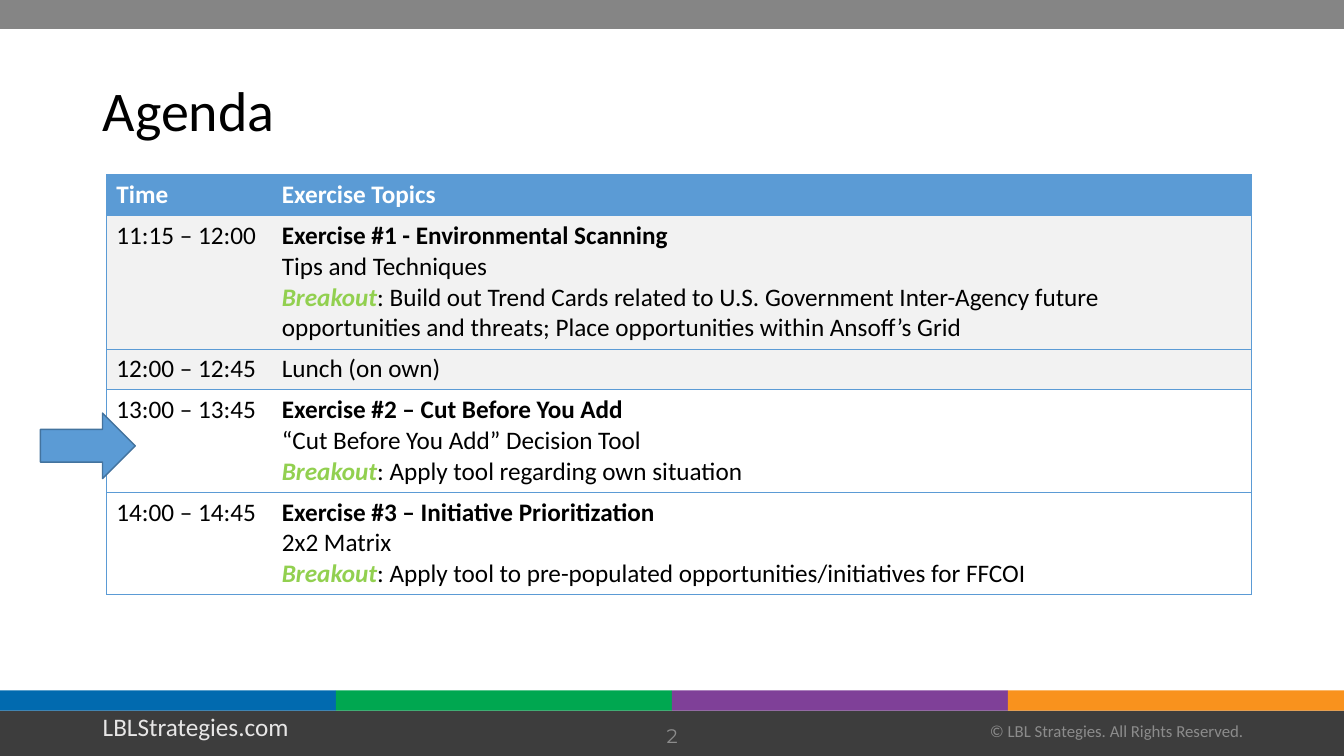
from dataclasses import dataclass

from lxml import etree
from pptx import Presentation
from pptx.dml.color import RGBColor
from pptx.enum import shapes, text
from pptx.oxml import ns
from pptx.util import Cm, Pt

BLACK = RGBColor(0x00, 0x00, 0x00)
WHITE = RGBColor(0xFF, 0xFF, 0xFF)
TOP_GREY = RGBColor(0x85, 0x85, 0x85)
FOOTER_GREY = RGBColor(0x3D, 0x3D, 0x3D)
FOOTER_TEXT = RGBColor(0x8C, 0x8C, 0x8C)
SITE_TEXT = RGBColor(0xE7, 0xE6, 0xE6)
BLUE = RGBColor(0x5B, 0x9B, 0xD5)
ARROW_EDGE = RGBColor(0x43, 0x73, 0x9E)
ROW_GREY = RGBColor(0xF2, 0xF2, 0xF2)
GREEN = RGBColor(0x92, 0xD0, 0x50)
STRIPES = (RGBColor(0x01, 0x6A, 0xAF), RGBColor(0x00, 0xA7, 0x50),
           RGBColor(0x7F, 0x40, 0x98), RGBColor(0xF9, 0x92, 0x1D))
WIDTH, HEIGHT = 33.87, 19.05
BODY_FONT = "Calibri"


@dataclass(frozen=True)
class Box:
    left: float
    top: float
    width: float
    height: float

    def lengths(self) -> tuple:
        return Cm(self.left), Cm(self.top), Cm(self.width), Cm(self.height)


@dataclass(frozen=True)
class FooterText:
    wording: str
    box: Box
    size: int
    color: RGBColor
    font: str = BODY_FONT
    align: text.PP_ALIGN = text.PP_ALIGN.CENTER
    anchor: text.MSO_ANCHOR = text.MSO_ANCHOR.MIDDLE


@dataclass(frozen=True)
class Session:
    time: str
    heading: str
    height: float
    topic: str = ""
    breakout: str = ""
    shaded: bool = False


FOOTER = (
    FooterText("LBLStrategies.com", Box(2.34, 17.8, 5.46, 1.02), 18, SITE_TEXT,
               align=text.PP_ALIGN.LEFT, anchor=text.MSO_ANCHOR.TOP),
    FooterText("© LBL Strategies. All Rights Reserved.",
               Box(22.43, 17.91, 11.43, 1.02), 12, FOOTER_TEXT),
    FooterText("2", Box(13.13, 18.03, 7.62, 1.02), 14, FOOTER_TEXT, "Montserrat"),
)
HEADER_HEIGHT = 1.03
SESSIONS = (
    Session("11:15 – 12:00", "Exercise #1 - Environmental Scanning", 3.36,
            "Tips and Techniques",
            ": Build out Trend Cards related to U.S. Government Inter-Agency future "
            "opportunities and threats; Place opportunities within Ansoff’s Grid", True),
    Session("12:00 – 12:45", "Lunch (on own)", 1.03, shaded=True),
    Session("13:00 – 13:45", "Exercise #2 – Cut Before You Add", 2.58,
            "“Cut Before You Add” Decision Tool",
            ": Apply tool regarding own situation"),
    Session("14:00 – 14:45", "Exercise #3 – Initiative Prioritization", 2.58,
            "2x2 Matrix",
            ": Apply tool to pre-populated opportunities/initiatives for FFCOI"),
)


def set_font(font, size: int, color: RGBColor, bold: bool = False,
             name: str = BODY_FONT) -> None:
    font.name, font.size, font.bold = name, Pt(size), bold
    font.color.rgb = color


def add_block(slide, preset, box: Box, color: RGBColor):
    block = slide.shapes.add_shape(preset, *box.lengths())
    block.shadow.inherit = False
    block.fill.solid()
    block.fill.fore_color.rgb = color
    block.line.fill.background()
    return block


def add_bands(slide) -> None:
    bar = shapes.MSO_SHAPE.RECTANGLE
    add_block(slide, bar, Box(0, 0, WIDTH, 0.73), TOP_GREY)
    add_block(slide, bar, Box(0, 17.91, WIDTH, 1.14), FOOTER_GREY)
    stripe_width = WIDTH / len(STRIPES)
    for index, color in enumerate(STRIPES):
        add_block(slide, bar, Box(index * stripe_width, 17.4, stripe_width, 0.51), color)


def add_footer_text(slide, item: FooterText) -> None:
    frame = slide.shapes.add_textbox(*item.box.lengths()).text_frame
    frame.word_wrap = True
    frame.vertical_anchor = item.anchor
    paragraph = frame.paragraphs[0]
    paragraph.text = item.wording
    paragraph.alignment = item.align
    set_font(paragraph.font, item.size, item.color, name=item.font)


def format_title(title) -> None:
    title.left, title.top, title.width, title.height = Box(2.34, 1.02, 29.21, 3.68).lengths()
    title.text_frame.vertical_anchor = text.MSO_ANCHOR.MIDDLE
    paragraph = title.text_frame.paragraphs[0]
    paragraph.text = "Agenda"
    paragraph.alignment = text.PP_ALIGN.LEFT
    paragraph.line_spacing = 0.9
    set_font(paragraph.font, 40, BLACK)


def style_cell(cell, inner_side: str, fill: RGBColor | None) -> None:
    """Rule every side but the one facing the other column, then fill."""
    properties = cell._tc.get_or_add_tcPr()
    for side in ("lnL", "lnR", "lnT", "lnB"):
        line = etree.SubElement(properties, ns.qn(f"a:{side}"), w=str(Pt(0.5)))
        if side == inner_side:
            etree.SubElement(line, ns.qn("a:noFill"))
        else:
            solid = etree.SubElement(line, ns.qn("a:solidFill"))
            etree.SubElement(solid, ns.qn("a:srgbClr"), val=str(BLUE))
    if fill is None:
        cell.fill.background()
    else:
        cell.fill.solid()
        cell.fill.fore_color.rgb = fill


def write_line(paragraph, wording: str, color: RGBColor = BLACK, bold: bool = False) -> None:
    paragraph.text = wording
    set_font(paragraph.font, 18, color, bold)


def write_session(time_cell, topic_cell, session: Session) -> None:
    write_line(time_cell.text_frame.paragraphs[0], session.time)
    frame = topic_cell.text_frame
    write_line(frame.paragraphs[0], session.heading, bold=bool(session.topic))
    if session.topic:
        write_line(frame.add_paragraph(), session.topic)
    if session.breakout:
        paragraph = frame.add_paragraph()
        label, task = paragraph.add_run(), paragraph.add_run()
        label.text, task.text = "Breakout", session.breakout
        set_font(label.font, 18, GREEN, True)
        label.font.italic = True
        set_font(task.font, 18, BLACK)


def add_agenda(slide) -> None:
    heights = [HEADER_HEIGHT] + [session.height for session in SESSIONS]
    box = Box(2.68, 4.4, 28.85, sum(heights))
    agenda = slide.shapes.add_table(len(heights), 2, *box.lengths()).table
    agenda.first_row = agenda.horz_banding = False
    agenda.columns[0].width, agenda.columns[1].width = Cm(4.17), Cm(24.68)
    for row, height in zip(agenda.rows, heights):
        row.height = Cm(height)
    fills = [BLUE] + [ROW_GREY if session.shaded else None for session in SESSIONS]
    for row, fill in zip(agenda.rows, fills):
        for cell, inner_side in zip(row.cells, ("lnR", "lnL")):
            style_cell(cell, inner_side, fill)
    for column, heading in enumerate(("Time", "Exercise Topics")):
        write_line(agenda.cell(0, column).text_frame.paragraphs[0], heading, WHITE, True)
    for row, session in enumerate(SESSIONS, start=1):
        write_session(agenda.cell(row, 0), agenda.cell(row, 1), session)


def main() -> None:
    deck = Presentation()
    deck.slide_width, deck.slide_height = Cm(WIDTH), Cm(HEIGHT)
    slide = deck.slides.add_slide(deck.slide_layouts[5])
    add_bands(slide)
    format_title(slide.shapes.title)
    for item in FOOTER:
        add_footer_text(slide, item)
    add_agenda(slide)
    current = add_block(slide, shapes.MSO_SHAPE.RIGHT_ARROW,
                        Box(1.02, 10.41, 2.39, 1.65), BLUE)
    current.line.color.rgb = ARROW_EDGE
    current.line.width = Pt(1)
    deck.save("out.pptx")


if __name__ == "__main__":
    main()
